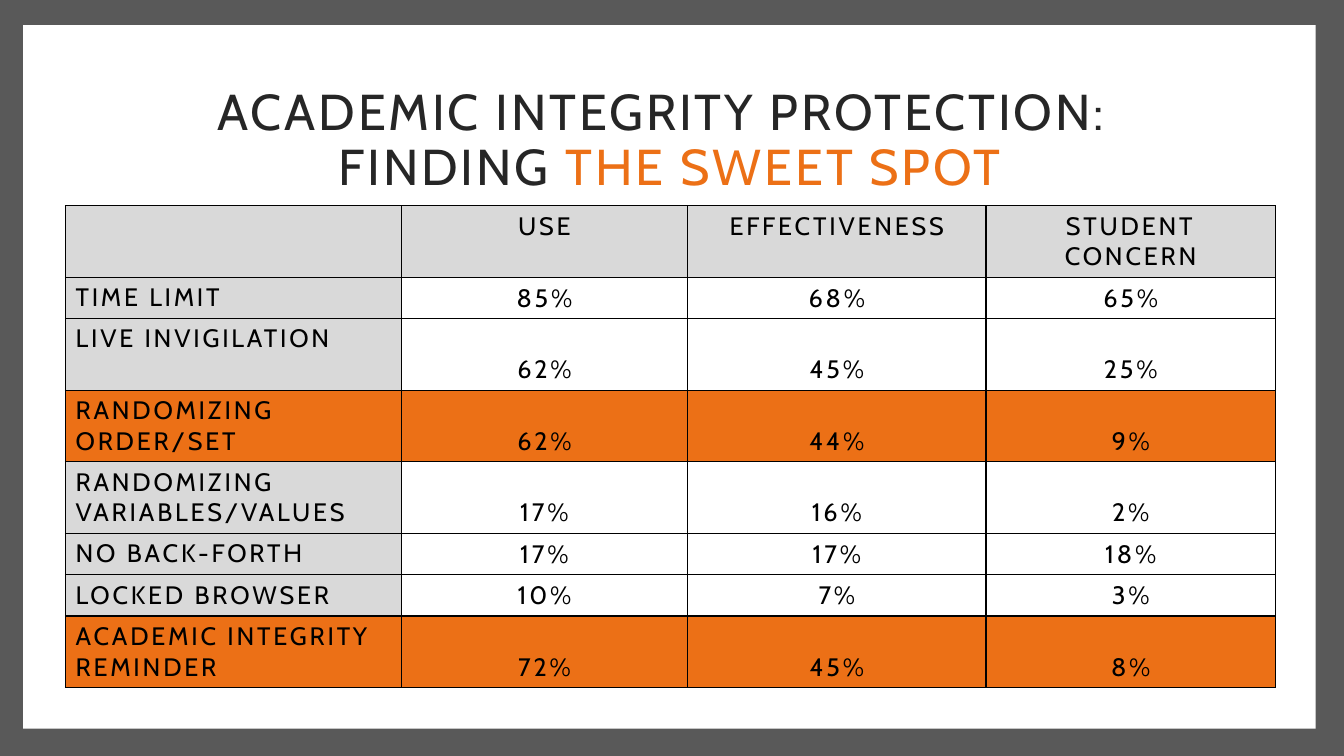
import pptx
import pptx.util
import pptx.dml.color
import pptx.enum.shapes
import pptx.enum.text
import pptx.oxml
import pptx.oxml.ns
import lxml.etree

Inches = pptx.util.Inches
Pt = pptx.util.Pt
ALIGN = pptx.enum.text.PP_ALIGN
ANCHOR = pptx.enum.text.MSO_ANCHOR

COLORS = {
    "frame": "595959",
    "panel": "FFFFFF",
    "title": "262626",
    "accent": "EC7016",
    "label": "D9D9D9",
    "ink": "000000",
}
FONT = "Cabin"
COLUMN_WIDTHS = [3.33, 2.84, 2.96, 2.87]
SINGLE_ROW, DOUBLE_ROW = 0.41, 0.71
HEADER = ["", "USE", "EFFECTIVENESS", "STUDENT CONCERN"]
MEASURES = [
    ("TIME LIMIT", [85, 68, 65], SINGLE_ROW),
    ("LIVE INVIGILATION", [62, 45, 25], DOUBLE_ROW),
    ("RANDOMIZING ORDER/SET", [62, 44, 9], DOUBLE_ROW),
    ("RANDOMIZING VARIABLES/VALUES", [17, 16, 2], DOUBLE_ROW),
    ("NO BACK-FORTH", [17, 17, 18], SINGLE_ROW),
    ("LOCKED BROWSER", [10, 7, 3], SINGLE_ROW),
    ("ACADEMIC INTEGRITY REMINDER", [72, 45, 8], DOUBLE_ROW),
]
SWEET_SPOT = {"RANDOMIZING ORDER/SET", "ACADEMIC INTEGRITY REMINDER"}


def rgb(name):
    return pptx.dml.color.RGBColor.from_string(COLORS[name])


def apply_format(target, values):
    for name, value in values.items():
        setattr(target, name, value)


def add_run(paragraph, text, size, color):
    run = paragraph.add_run()
    run.text = text
    apply_format(run.font, {"name": FONT, "size": Pt(size), "bold": False})
    run.font.color.rgb = rgb(color)
    run.font._element.set("spc", "200")


def add_panel(slide, box, color):
    panel = slide.shapes.add_shape(
        pptx.enum.shapes.MSO_SHAPE.RECTANGLE, *map(Inches, box))
    panel.shadow.inherit = False
    panel.fill.solid()
    panel.fill.fore_color.rgb = rgb(color)
    panel.line.fill.background()
    slide.shapes.title.element.addprevious(panel.element)


def format_title(title):
    apply_format(title, {
        "left": Inches(1.29), "top": Inches(0.57),
        "width": Inches(10.71), "height": Inches(1.67),
    })
    apply_format(title.text_frame, {
        "word_wrap": True,
        "auto_size": pptx.enum.text.MSO_AUTO_SIZE.NONE,
        "vertical_anchor": ANCHOR.MIDDLE,
    })
    paragraph = title.text_frame.paragraphs[0]
    apply_format(paragraph, {"alignment": ALIGN.CENTER, "line_spacing": 0.9})
    add_run(paragraph, "ACADEMIC INTEGRITY PROTECTION: ", 36, "title")
    paragraph.add_line_break()
    add_run(paragraph, "FINDING ", 36, "title")
    add_run(paragraph, "THE SWEET SPOT", 36, "accent")


def add_borders(cell):
    properties = cell._tc.get_or_add_tcPr()
    for side in ("lnL", "lnR", "lnT", "lnB"):
        properties.append(pptx.oxml.parse_xml(
            f'<a:{side} {pptx.oxml.ns.nsdecls("a")} w="{Pt(1)}"><a:solidFill>'
            f'<a:srgbClr val="{COLORS["ink"]}"/></a:solidFill></a:{side}>'))


def fill_cell(cell, text, color, alignment, anchor):
    add_borders(cell)
    cell.fill.solid()
    cell.fill.fore_color.rgb = rgb(color)
    cell.vertical_anchor = anchor
    paragraph = cell.text_frame.paragraphs[0]
    paragraph.alignment = alignment
    if text:
        add_run(paragraph, text, 18, "ink")


def add_measures_table(slide):
    heights = [DOUBLE_ROW] + [height for _, _, height in MEASURES]
    table = slide.shapes.add_table(
        len(heights), len(COLUMN_WIDTHS), Inches(0.65), Inches(2.04),
        Inches(sum(COLUMN_WIDTHS)), Inches(sum(heights))).table
    apply_format(table, {"first_row": False, "horz_banding": False})
    for column, width in zip(table.columns, COLUMN_WIDTHS):
        column.width = Inches(width)
    for row, height in zip(table.rows, heights):
        row.height = Inches(height)
    for index, text in enumerate(HEADER):
        fill_cell(table.cell(0, index), text, "label", ALIGN.CENTER, ANCHOR.TOP)
    for index, (label, shares, _) in enumerate(MEASURES, 1):
        highlighted = label in SWEET_SPOT
        fill_cell(table.cell(index, 0), label,
                  "accent" if highlighted else "label", ALIGN.LEFT, ANCHOR.TOP)
        for column, share in enumerate(shares, 1):
            fill_cell(table.cell(index, column), f"{share}%",
                      "accent" if highlighted else "panel",
                      ALIGN.CENTER, ANCHOR.BOTTOM)


def main():
    presentation = pptx.Presentation()
    apply_format(presentation, {
        "slide_width": Inches(13.33), "slide_height": Inches(7.5)})
    slide = presentation.slides.add_slide(presentation.slide_layouts[5])
    add_panel(slide, (0, 0, 13.33, 7.5), "frame")
    add_panel(slide, (0.23, 0.25, 12.82, 6.98), "panel")
    format_title(slide.shapes.title)
    add_measures_table(slide)
    presentation.save("out.pptx")


if __name__ == "__main__":
    main()
